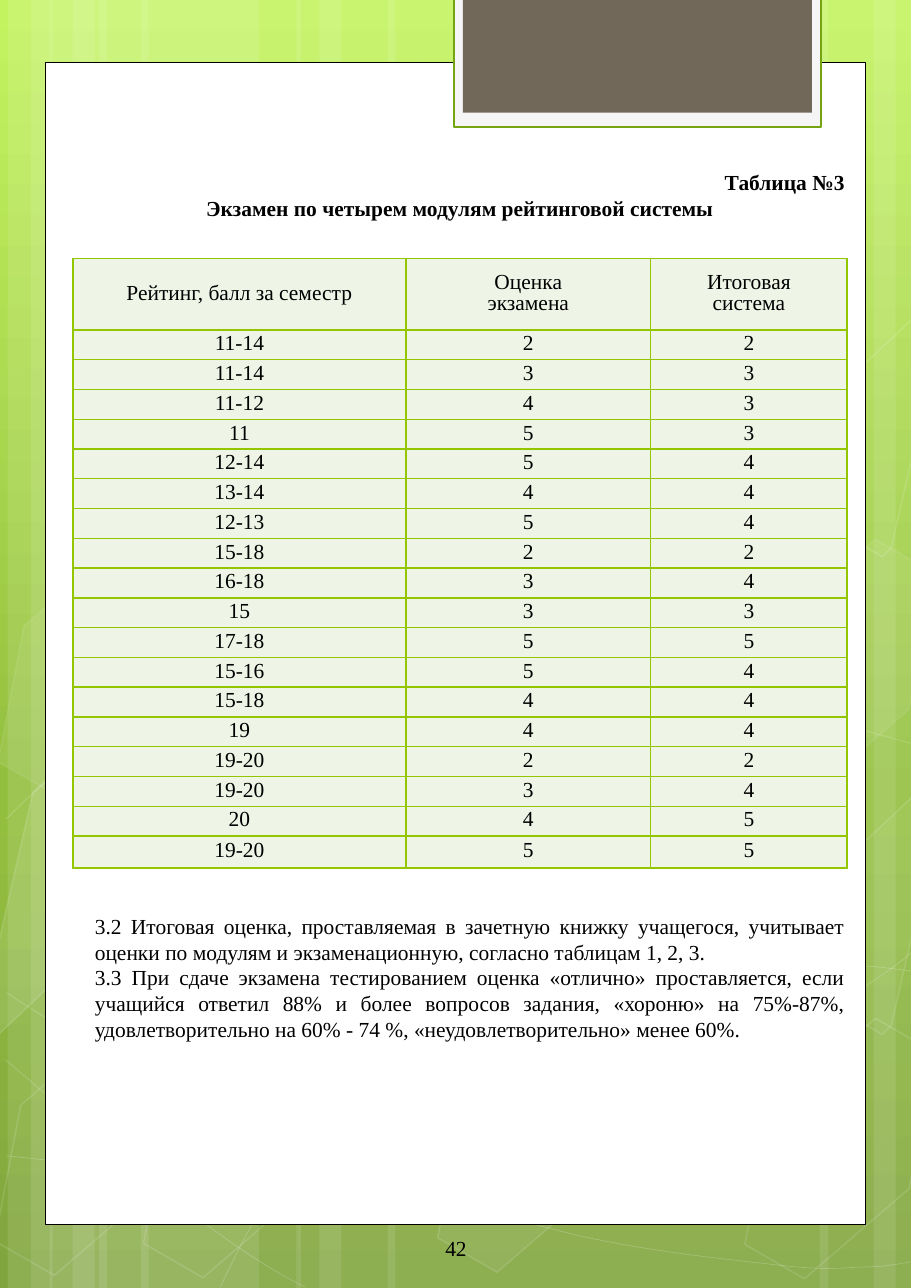
from copy import deepcopy
from typing import NamedTuple

from lxml.etree import SubElement
from pptx import Presentation
from pptx.dml.color import RGBColor
from pptx.enum.shapes import MSO_SHAPE as Kind
from pptx.enum.text import MSO_ANCHOR as Anchor, MSO_AUTO_SIZE as Fit, PP_ALIGN as Align
from pptx.oxml.ns import qn
from pptx.util import Pt

W, H = 595.44, 841.68
WHITE, BLACK, LIME = "FFFFFF", "000000", "94C600"
FONT = "Times New Roman"

Point = tuple[float, float]


class Box(NamedTuple):
    x: float
    y: float
    w: float
    h: float


class Hex(NamedTuple):
    x: float
    y: float
    fill: int
    line: int


class Cut(NamedTuple):
    points: list[Point]
    fill: int


STRIPES = [
    (64.8, 104.4), (5, 29.5), (20.2, 49.7), (92.2, 104.4), (32.4, 29.5), (47.5, 49.7),
    (437, 104.4), (571, 29.5), (535.7, 49.7), (253.4, 183.6), (193.7, 29.5), (208.8, 49.7),
]
# Each curve is a start point, then three points for every cubic segment.
CURVES = [
    [(4.3, 755.3), (36.7, 758.9), (68.4, 762.5), (113, 761), (157.7, 759.6), (213.1, 758.2),
     (272.9, 746.6), (331.9, 735.1), (416.9, 714.2), (471.6, 692.6), (525.6, 671),
     (581.8, 637.2), (599.8, 618.5)],
    [(4.3, 535), (21.6, 517.7), (38.9, 501.1), (72, 483.8), (105.8, 467.3), (154.1, 442.8),
     (206.6, 434.2), (259.9, 426.2), (324, 425.5), (389.5, 434.2), (455, 443.5),
     (563.8, 478.1), (599.8, 486.7)],
    [(3.6, 692.6), (75.6, 753.8), (146.9, 815.8), (199.4, 841)],
    [(4.3, 648.7), (23, 661), (41.8, 673.2), (76.3, 691.2), (110.9, 708.5), (162.7, 735.8),
     (212.4, 755.3), (262.1, 774.7), (324.7, 794.2), (373.7, 806.4), (423.4, 817.9),
     (475.9, 823), (507.6, 826.6), (539.3, 830.2), (547.2, 828.7), (562.3, 828),
     (578.2, 828), (589, 825.8), (599.8, 823.7)],
    [(144, 841), (154.8, 818.6), (165.6, 796.3), (180, 775.4), (194.4, 755.3), (214.6, 733),
     (231.1, 717.1), (247.7, 702), (257.8, 695.5), (279.4, 684), (301.7, 672.5),
     (341.3, 656.6), (362.2, 648.7), (382.3, 641.5), (386.6, 641.5), (404.6, 638.6),
     (423.4, 635.8), (452.2, 632.9), (473, 631.4), (493.2, 630), (527.8, 631.4),
     (527.8, 631.4), (541, 631.4), (554, 631.4), (567.4, 631.4), (578.2, 632.2),
     (588.2, 633.6), (593.3, 634.3), (599, 635), (596.9, 635), (599, 635.8)],
]
HEXES = [
    Hex(198.7, 40.3, 4, 8), Hex(295.9, 661, 6, 12), Hex(6.5, 663.1, 0, 12),
    Hex(8.6, 349.9, 7, 8), Hex(55.4, 506.9, 0, 12), Hex(103.7, 664.6, 0, 12),
    Hex(56.9, 192.2, 0, 12), Hex(448.6, 509, 10, 12), Hex(496.8, 665.3, 0, 12),
    Hex(496.8, 352.1, 7, 8),
]
LEFT = [(21.6, 517.7), (31.7, 508.3), (77, 535), (56.9, 621.4), (-7.9, 682.6), (-15.1, 678.2)]
RIGHT = [(551.5, 563), (616.3, 501.8), (620.6, 504.7), (582.5, 670.3), (576.7, 676.1),
         (531.4, 649.4)]
CUTS = [Cut(LEFT, 10), Cut(RIGHT, 4), Cut([(x, y - 312.3) for x, y in RIGHT], 0)]

HEAD = ["Рейтинг, балл за семестр", "Оценка\nэкзамена", "Итоговая\nсистема"]
MARKS = [
    ("11-14", 2, 2), ("11-14", 3, 3), ("11-12", 4, 3), ("11", 5, 3), ("12-14", 5, 4),
    ("13-14", 4, 4), ("12-13", 5, 4), ("15-18", 2, 2), ("16-18", 3, 4), ("15", 3, 3),
    ("17-18", 5, 5), ("15-16", 5, 4), ("15-18", 4, 4), ("19", 4, 4), ("19-20", 2, 2),
    ("19-20", 3, 4), ("20", 4, 5), ("19-20", 5, 5),
]
TITLE = "Таблица №3\nЭкзамен по четырем модулям рейтинговой системы"
NOTES = (
    "3.2 Итоговая оценка, проставляемая в зачетную книжку учащегося, учитывает оценки по "
    "модулям и экзаменационную, согласно таблицам 1, 2, 3.\n"
    "3.3 При сдаче экзамена тестированием оценка «отлично» проставляется, если учащийся "
    "ответил 88% и более вопросов задания, «хороню» на 75%-87%, удовлетворительно на "
    "60% - 74 %, «неудовлетворительно» менее 60%."
)


def ink(text: str) -> RGBColor:
    return RGBColor.from_string(text)


def tint(fill, color: str) -> None:
    fill.solid()
    fill.fore_color.rgb = ink(color)


def fade(shape, where: str, alpha: int) -> None:
    """Set the opacity, in percent, of the solid fill found under spPr."""
    node = shape.element.spPr.find(f"{where}{qn('a:solidFill')}/{qn('a:srgbClr')}")
    SubElement(node, qn("a:alpha")).set("val", str(alpha * 1000))


def dress(shape, *, fill: str = WHITE, alpha: int = 100, line: str = "",
          width: float = 1, sheer: int = 100) -> None:
    """Format a shape; alpha and sheer are the opacity of fill and line."""
    shape.shadow.inherit = False
    if alpha:
        tint(shape.fill, fill)
        if alpha < 100:
            fade(shape, "", alpha)
    else:
        shape.fill.background()
    if line:
        tint(shape.line.fill, line)
        shape.line.width = Pt(width)
        if sheer < 100:
            fade(shape, qn("a:ln") + "/", sheer)
    else:
        shape.line.fill.background()


def add(shapes, kind: Kind, box: Box, **look):
    shape = shapes.add_shape(kind, *map(Pt, box))
    dress(shape, **look)
    return shape


def trace(shapes, points: list[Point], close: bool, **look):
    pen, *rest = [(Pt(x), Pt(y)) for x, y in points]
    draft = shapes.build_freeform(*pen, scale=1.0)
    draft.add_line_segments(rest, close=close)
    shape = draft.convert_to_shape()
    dress(shape, **look)
    return shape


def bend(shape) -> None:
    """Turn every three straight segments into one cubic segment."""
    legs = list(shape.element.iter(qn("a:lnTo")))
    for i in range(0, len(legs), 3):
        first, *others = legs[i:i + 3]
        first.tag = qn("a:cubicBezTo")
        for leg in others:
            first.append(leg[0])
            leg.getparent().remove(leg)


def write(frame, text: str, *, align: Align = Align.CENTER, bold: bool = False,
          gap: float = 0) -> None:
    for i, line in enumerate(text.split("\n")):
        para = frame.add_paragraph() if i else frame.paragraphs[0]
        para.alignment = align
        if gap:
            para.line_spacing = Pt(gap)
        run = para.add_run()
        run.text = line
        font = run.font
        font.name, font.size, font.bold = FONT, Pt(14), bold
        font.color.rgb = ink(BLACK)


def place(shape, box: Box, text: str, **look) -> None:
    shape.left, shape.top, shape.width, shape.height = map(Pt, box)
    frame = shape.text_frame
    frame.word_wrap, frame.auto_size = True, Fit.SHAPE_TO_FIT_TEXT
    frame.vertical_anchor = Anchor.TOP
    frame.margin_left = frame.margin_right = Pt(8)
    frame.margin_top = frame.margin_bottom = Pt(4)
    write(frame, text, **look)


def edge(cell) -> None:
    props = cell._tc.get_or_add_tcPr()
    for side in ("lnL", "lnR", "lnT", "lnB"):
        line = SubElement(props, qn(f"a:{side}"), w=str(Pt(1)))
        SubElement(SubElement(line, qn("a:solidFill")), qn("a:srgbClr"), val=LIME)


def grid(slide, box: Box) -> None:
    rows = [HEAD, *MARKS]
    table = slide.shapes.add_table(len(rows), len(HEAD), *map(Pt, box)).table
    table.first_row = table.horz_banding = False
    for col, width in zip(table.columns, (217.6, 160.1, 128.3)):
        col.width = Pt(width)
    tall = [46.8] + [19.45] * (len(MARKS) - 1) + [20.9]
    for i, row in enumerate(rows):
        table.rows[i].height = Pt(tall[i])
        for j, value in enumerate(row):
            cell = table.cell(i, j)
            edge(cell)
            tint(cell.fill, "EEF5E7")
            cell.vertical_anchor = Anchor.MIDDLE
            cell.margin_left = cell.margin_right = Pt(0.7)
            cell.margin_top = cell.margin_bottom = Pt(0)
            write(cell.text_frame, str(value), gap=13.7)


def shade(slide) -> None:
    fill = slide.background.fill
    fill.gradient()
    fill.gradient_angle = 270
    stops = slide.element.find(f".//{qn('a:gsLst')}")
    stops.append(deepcopy(stops[-1]))
    tones = [(0, "C3F35F"), (0.62, "93BF3F"), (1, "81A53E")]
    for stop, (spot, color) in zip(fill.gradient_stops, tones):
        stop.position, stop.color.rgb = spot, ink(color)


def adorn(shapes) -> None:
    """Draw the stripes, curves and hexagons."""
    for x, w in STRIPES:
        add(shapes, Kind.RECTANGLE, Box(x, 0, w, H), alpha=10)
    for knots in CURVES:
        bend(trace(shapes, knots, False, alpha=0, line=WHITE, width=0.5, sheer=20))
    for x, y, alpha, sheer in HEXES:
        shape = add(shapes, Kind.HEXAGON, Box(x, y, 104.4, 170.6), alpha=alpha,
                    line=WHITE, sheer=sheer)
        shape.adjustments[0] = 0.285
        shape.rotation = 30
    for cut in CUTS:
        trace(shapes, cut.points, True, alpha=cut.fill, line=WHITE, sheer=12)


def main() -> None:
    deck = Presentation()
    deck.slide_width, deck.slide_height = Pt(W), Pt(H)
    layout = deck.slide_layouts.get_by_name("Title Only")
    slide = deck.slides.add_slide(layout)
    shapes = slide.shapes
    shade(slide)

    group = shapes.add_group_shape()
    adorn(group.shapes)
    sheet = add(shapes, Kind.RECTANGLE, Box(29.5, 41, 536, 759.2), line=BLACK, width=0.5)
    card = add(shapes, Kind.RECTANGLE, Box(296.6, -2.9, 239.8, 85.7), fill="F5F5F5",
               line="74A510", width=1.25)
    panel = add(shapes, Kind.RECTANGLE, Box(302.6, -2.9, 228.2, 76.6), fill="71685A")
    for part in (group, sheet, card, panel):
        layout.shapes.element.append(part.element)  # the decor belongs to the layout

    place(shapes.title, Box(41, 106.6, 519.1, 43.2), TITLE, bold=True)
    shapes.title.text_frame.paragraphs[0].alignment = Align.RIGHT
    grid(slide, Box(47.7, 168.9, 506, 398.4))
    for box, text, align in [
        (Box(54, 592.6, 506.2, 94.3), NOTES, Align.JUSTIFY),
        (Box(263.5, 802.8, 69.1, 25.2), "42", Align.CENTER),
    ]:
        place(shapes.add_textbox(*map(Pt, box)), box, text, align=align)
    deck.save("out.pptx")


if __name__ == "__main__":
    main()
